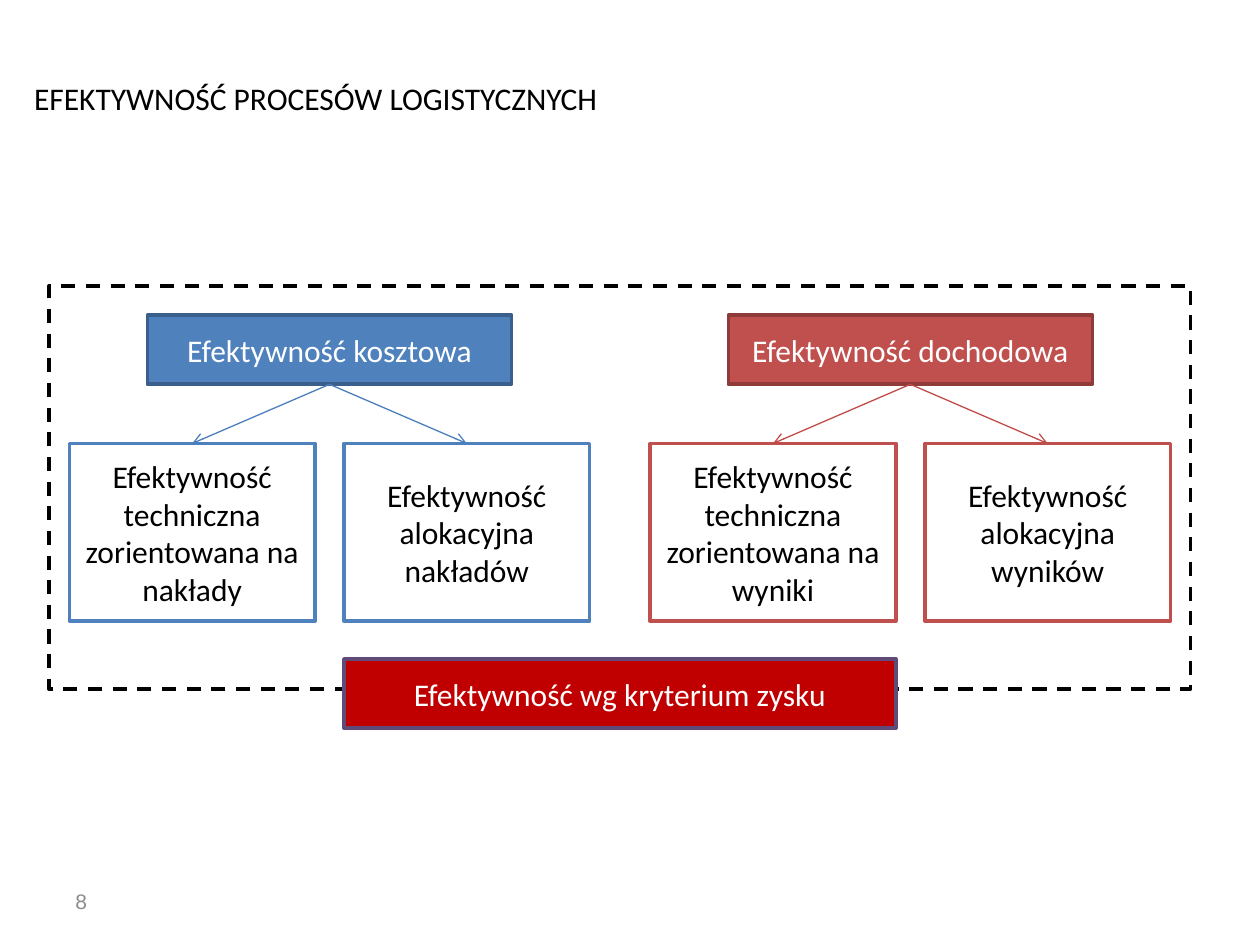
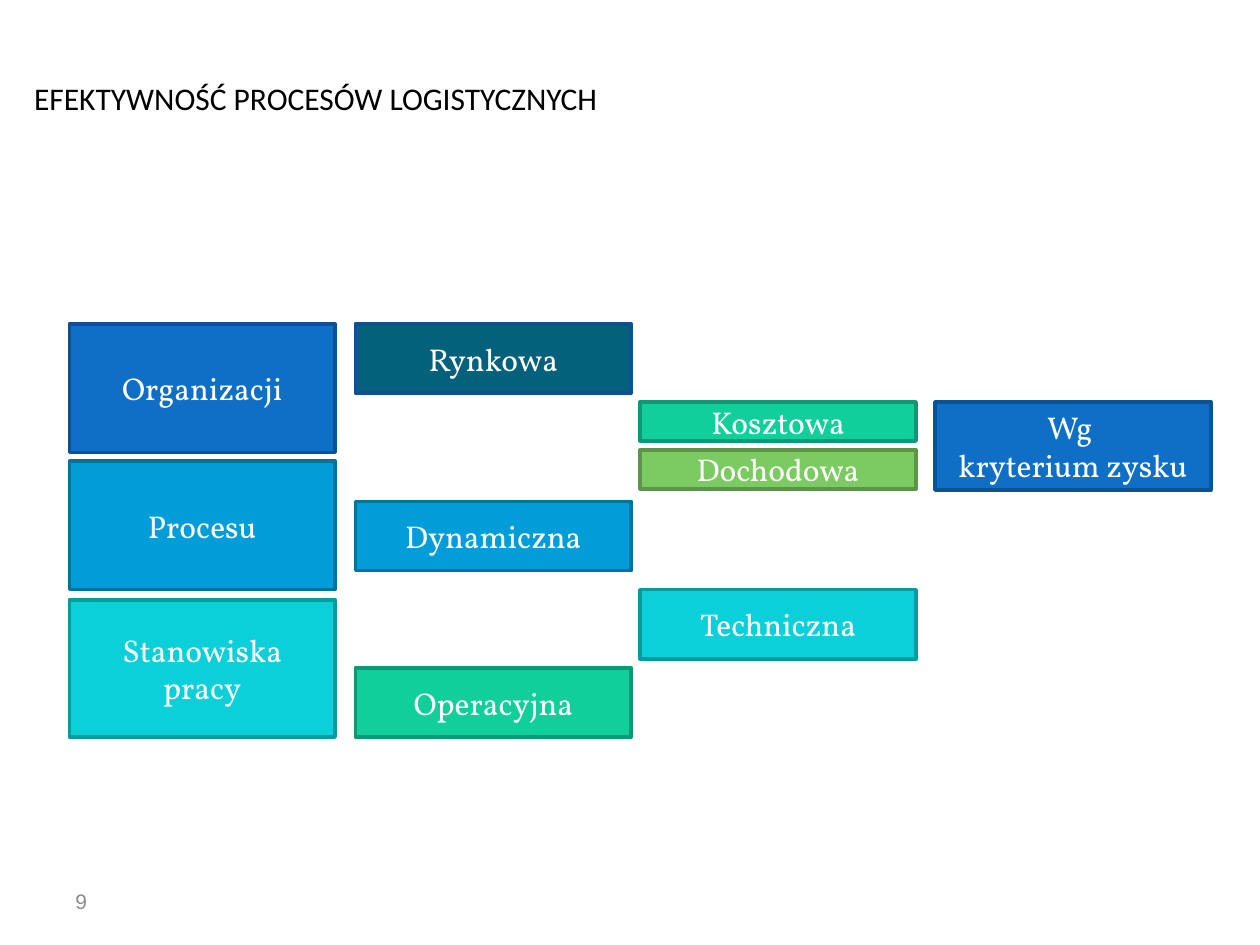
"""Two slides on the efficiency of logistics processes."""
from lxml import etree
from pptx import Presentation
from pptx.dml.color import RGBColor
from pptx.enum import dml, shapes, text
from pptx.oxml.ns import qn
from pptx.util import Inches, Pt

BLACK = RGBColor(0x00, 0x00, 0x00)
WHITE = RGBColor(0xFF, 0xFF, 0xFF)
GREY = RGBColor(0x8C, 0x8C, 0x8C)
BLUE = RGBColor(0x4F, 0x81, 0xBD)
BLUE_EDGE = RGBColor(0x3A, 0x5F, 0x8C)
BLUE_LINE = RGBColor(0x4B, 0x7E, 0xBC)
BRICK = RGBColor(0xC0, 0x50, 0x4D)
BRICK_EDGE = RGBColor(0x8E, 0x3B, 0x39)
BRICK_LINE = RGBColor(0xBF, 0x4C, 0x48)
RED = RGBColor(0xC0, 0x00, 0x00)
PLUM = RGBColor(0x5F, 0x4A, 0x78)
NAVY = RGBColor(0x0F, 0x6F, 0xC6)
NAVY_EDGE = RGBColor(0x0B, 0x52, 0x92)
SKY = RGBColor(0x00, 0x9D, 0xD9)
SKY_EDGE = RGBColor(0x00, 0x74, 0xA1)
AQUA = RGBColor(0x0B, 0xD0, 0xD9)
AQUA_EDGE = RGBColor(0x08, 0x9A, 0xA1)
MINT = RGBColor(0x10, 0xCF, 0x9B)
MINT_EDGE = RGBColor(0x0C, 0x99, 0x73)
LIME = RGBColor(0x7C, 0xCA, 0x62)
LIME_EDGE = RGBColor(0x5C, 0x95, 0x49)
TEAL = RGBColor(0x04, 0x61, 0x7B)

TITLE = "EFEKTYWNOŚĆ PROCESÓW LOGISTYCZNYCH"
PROFIT = "Efektywność wg kryterium zysku"
TREES = [
    (0.55, "Efektywność kosztowa", BLUE, BLUE_EDGE, BLUE_LINE,
     ["Efektywność techniczna zorientowana na nakłady",
      "Efektywność alokacyjna nakładów"]),
    (5.16, "Efektywność dochodowa", BRICK, BRICK_EDGE, BRICK_LINE,
     ["Efektywność techniczna zorientowana na wyniki",
      "Efektywność alokacyjna wyników"]),
]
COLUMNS = [
    (0.55, 2.11, [("Organizacji", 2.57, 1.02, NAVY, NAVY_EDGE),
                  ("Procesu", 3.66, 1.02, SKY, SKY_EDGE),
                  ("Stanowiska pracy", 4.76, 1.09, AQUA, AQUA_EDGE)]),
    (2.82, 2.19, [("Rynkowa", 2.57, 0.55, TEAL, NAVY_EDGE),
                  ("Dynamiczna", 3.98, 0.55, SKY, SKY_EDGE),
                  ("Operacyjna", 5.3, 0.55, MINT, MINT_EDGE)]),
    (5.08, 2.19, [("Kosztowa", 3.19, 0.31, MINT, MINT_EDGE),
                  ("Dochodowa", 3.57, 0.31, LIME, LIME_EDGE),
                  ("Techniczna", 4.68, 0.55, AQUA, AQUA_EDGE)]),
    (7.42, 2.19, [("Wg \vkryterium zysku", 3.19, 0.7, NAVY, NAVY_EDGE)]),
]
LEAF_W, LEAF_GAP, ROOT_W, BAR_H = 1.95, 0.23, 2.89, 0.55


def write(shape, words, font="Calibri", size=18, color=BLACK,
          align=text.PP_ALIGN.LEFT, anchor=text.MSO_ANCHOR.MIDDLE):
    frame = shape.text_frame
    frame.text = words
    frame.word_wrap = True
    frame.auto_size = text.MSO_AUTO_SIZE.NONE
    frame.vertical_anchor = anchor
    para = frame.paragraphs[0]
    para.alignment = align
    para.font.name, para.font.size = font, Pt(size)
    para.font.color.rgb = color


def box(slide, at, fill, edge, words="", **style):
    shape = slide.shapes.add_shape(shapes.MSO_SHAPE.RECTANGLE, *map(Inches, at))
    shape.shadow.inherit = False
    shape.fill.solid()
    shape.fill.fore_color.rgb = fill
    shape.line.color.rgb = edge
    shape.line.width = Pt(2)
    if words:
        write(shape, words, align=text.PP_ALIGN.CENTER, **style)
    return shape


def arrow(slide, root, leaf, color):
    link = slide.shapes.add_connector(shapes.MSO_CONNECTOR.STRAIGHT, 0, 0, 0, 0)
    link.begin_connect(root, 2)
    link.end_connect(leaf, 0)
    link.line.color.rgb = color
    link.line.width = Pt(0.75)
    etree.SubElement(link.line._get_or_add_ln(), qn("a:tailEnd"), type="arrow")
    etree.SubElement(link._element.spPr, qn("a:effectLst"))


def start(deck, number):
    slide = deck.slides.add_slide(deck.slide_layouts[5])
    title = slide.shapes.title
    title.left, title.top = Inches(0.17), Inches(0.58)
    title.width, title.height = Inches(7.83), Inches(0.4)
    write(title, TITLE, anchor=text.MSO_ANCHOR.TOP)
    foot = slide.shapes.add_textbox(*map(Inches, (0.5, 6.95, 2.33, 0.4)))
    write(foot, str(number), font="Arial", size=12, color=GREY)
    return slide


def draw_trees(slide):
    frame = box(slide, (0.39, 2.27, 9.06, 3.2), WHITE, BLACK)
    frame.line.dash_style = dml.MSO_LINE.DASH
    step = LEAF_W + LEAF_GAP
    for left, head, fill, edge, line, leaves in TREES:
        indent = (step + LEAF_W - ROOT_W) / 2
        root = box(slide, (left + indent, 2.5, ROOT_W, BAR_H), fill, edge,
                   head, color=WHITE)
        for i, words in enumerate(leaves):
            leaf = box(slide, (left + i * step, 3.52, LEAF_W, 1.41),
                       WHITE, fill, words)
            arrow(slide, root, leaf, line)
    box(slide, (2.73, 5.23, 4.38, BAR_H), RED, PLUM, PROFIT, color=WHITE)


def draw_levels(slide):
    for left, width, cells in COLUMNS:
        for words, top, height, fill, edge in cells:
            box(slide, (left, top, width, height), fill, edge, words,
                font="Vollkorn", color=WHITE)


def main():
    deck = Presentation()
    deck.slide_width, deck.slide_height = Inches(10), Inches(7.5)
    for number, draw in enumerate((draw_trees, draw_levels), 8):
        draw(start(deck, number))
    deck.save("out.pptx")


if __name__ == "__main__":
    main()
